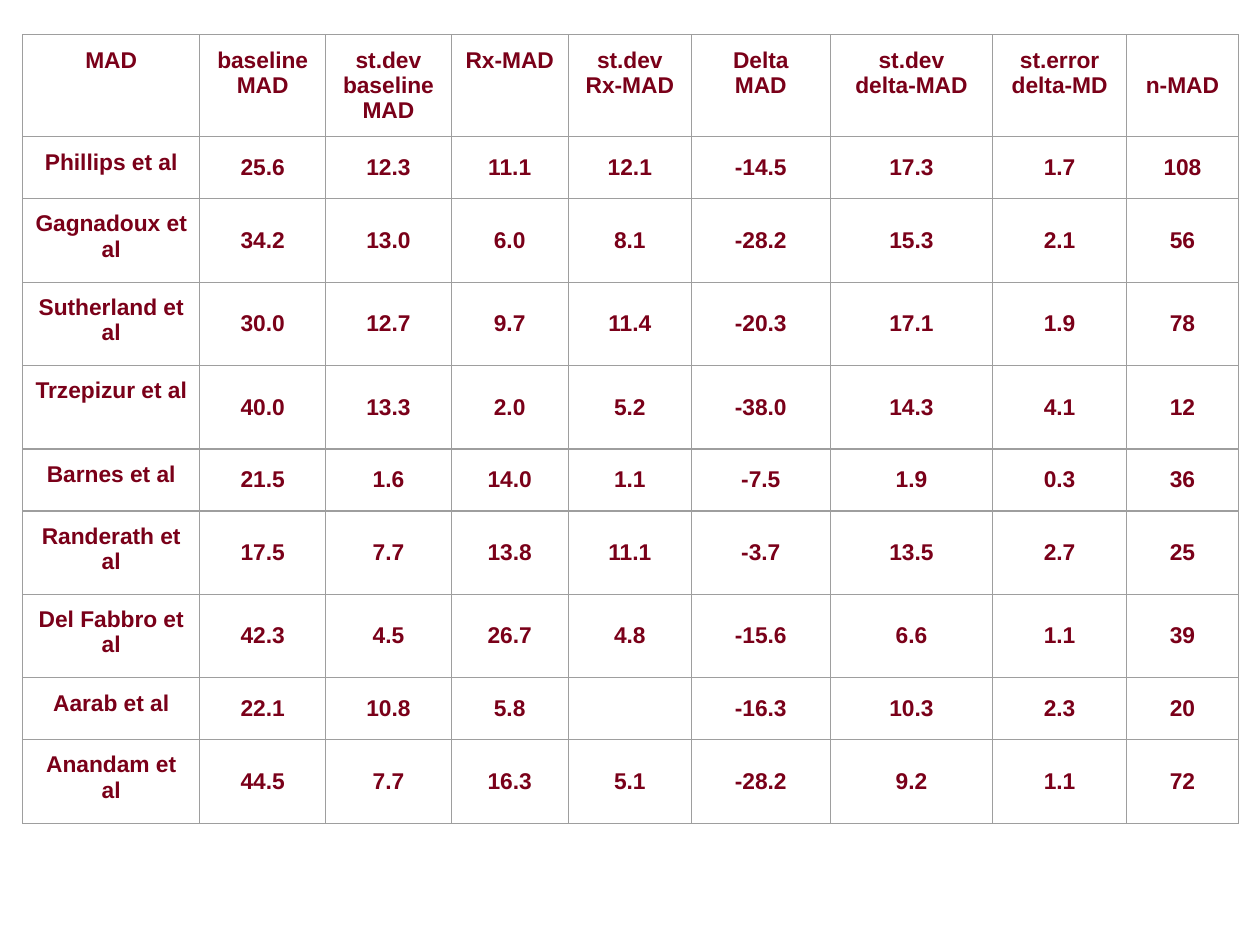
from lxml import etree
from pptx import Presentation
from pptx.dml.color import RGBColor
from pptx.enum.text import MSO_ANCHOR, PP_ALIGN
from pptx.oxml.ns import qn
from pptx.util import Pt

CENTER = PP_ALIGN.CENTER
TOP, MIDDLE = MSO_ANCHOR.TOP, MSO_ANCHOR.MIDDLE
MAROON = RGBColor(0x7A, 0x00, 0x19)
GREY = RGBColor(0x9E, 0x9E, 0x9E)

COL_WIDTHS = [101.2, 72, 71.7, 66.9, 70.4, 79.3, 92.9, 76.5, 63.9]
HEADER_HEIGHT, SHORT_ROW, TALL_ROW = 58.3, 35.4, 47.7
SHORT_STUDIES = ("Phillips et al", "Barnes et al", "Aarab et al")

HEADERS = ["MAD", "baseline\nMAD", "st.dev\nbaseline\nMAD", "Rx-MAD",
           "st.dev\nRx-MAD", "Delta\nMAD", "st.dev\ndelta-MAD",
           "st.error\ndelta-MD", "n-MAD"]
STUDIES = [
    ["Phillips et al", "25.6", "12.3", "11.1", "12.1", "-14.5", "17.3", "1.7", "108"],
    ["Gagnadoux et al", "34.2", "13.0", "6.0", "8.1", "-28.2", "15.3", "2.1", "56"],
    ["Sutherland et al", "30.0", "12.7", "9.7", "11.4", "-20.3", "17.1", "1.9", "78"],
    ["Trzepizur et al", "40.0", "13.3", "2.0", "5.2", "-38.0", "14.3", "4.1", "12"],
    ["Barnes et al", "21.5", "1.6", "14.0", "1.1", "-7.5", "1.9", "0.3", "36"],
    ["Randerath et al", "17.5", "7.7", "13.8", "11.1", "-3.7", "13.5", "2.7", "25"],
    ["Del Fabbro et al", "42.3", "4.5", "26.7", "4.8", "-15.6", "6.6", "1.1", "39"],
    ["Aarab et al", "22.1", "10.8", "5.8", "", "-16.3", "10.3", "2.3", "20"],
    ["Anandam et al", "44.5", "7.7", "16.3", "5.1", "-28.2", "9.2", "1.1", "72"],
]


class SlideBuilder:
    font, size, color = "Arial", 13, MAROON
    border_color, border_width = GREY, 0.75
    inset, narrow_inset, line_height = 7.2, 2.2, 14.6

    def __init__(self, slide):
        self.s = slide

    def borders(self, cell):
        tcPr = cell._tc.get_or_add_tcPr()
        for side in ("a:lnL", "a:lnR", "a:lnT", "a:lnB"):
            ln = etree.SubElement(tcPr, qn(side), w=str(Pt(self.border_width)))
            fill = etree.SubElement(ln, qn("a:solidFill"))
            etree.SubElement(fill, qn("a:srgbClr"), val=str(self.border_color))

    def cell(self, cell, text, anchor, side_inset, top_inset):
        self.borders(cell)
        cell.fill.background()
        cell.vertical_anchor = anchor
        cell.margin_left = cell.margin_right = Pt(side_inset)
        cell.margin_top, cell.margin_bottom = Pt(top_inset), Pt(self.inset)
        cell.text_frame.text = text
        for p in cell.text_frame.paragraphs:
            p.alignment = CENTER
            p.font.size = Pt(self.size)
            for r in p.runs:
                r.font.name = self.font
                r.font.size = Pt(self.size)
                r.font.bold = True
                r.font.color.rgb = self.color

    def table(self, x, y, rows, widths, heights):
        frame = self.s.shapes.add_table(len(rows), len(widths), Pt(x), Pt(y),
                                        Pt(sum(widths)), Pt(sum(heights)))
        table = frame.table
        table.first_row = table.horz_banding = False
        for column, width in zip(table.columns, widths):
            column.width = Pt(width)
        for row, height in zip(table.rows, heights):
            row.height = Pt(height)
        for i, values in enumerate(rows):
            for j, text in enumerate(values):
                is_value = i > 0 and j > 0
                side = self.narrow_inset if is_value and j == 1 else self.inset
                # The sample-size heading sits on the second header line
                drop = self.line_height if text == "n-MAD" else 0
                self.cell(table.cell(i, j), text, MIDDLE if is_value else TOP,
                          side, self.inset + drop)


def main():
    prs = Presentation()
    prs.slide_width, prs.slide_height = Pt(720), Pt(540)
    builder = SlideBuilder(prs.slides.add_slide(prs.slide_layouts[6]))
    heights = [HEADER_HEIGHT] + [SHORT_ROW if study[0] in SHORT_STUDIES else TALL_ROW
                                 for study in STUDIES]
    builder.table(12.9, 19.9, [HEADERS] + STUDIES, COL_WIDTHS, heights)
    prs.save("out.pptx")


if __name__ == "__main__":
    main()
